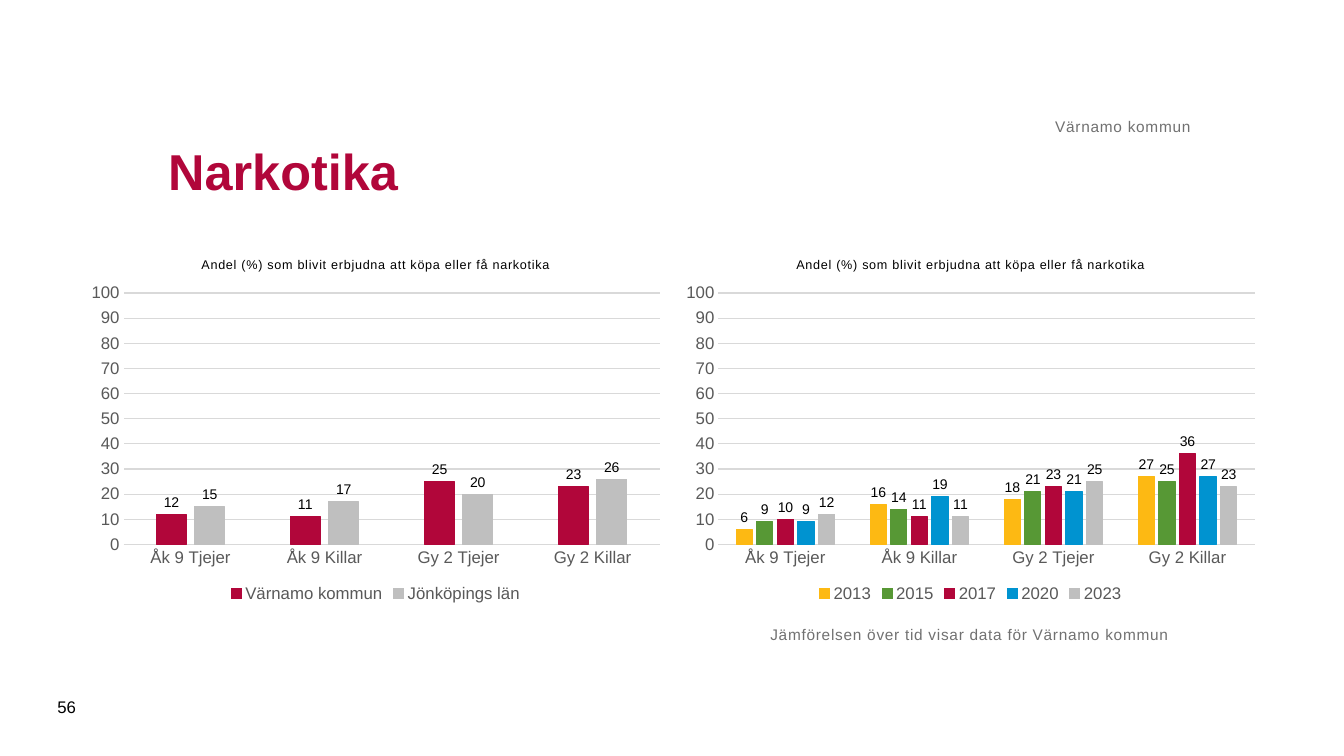
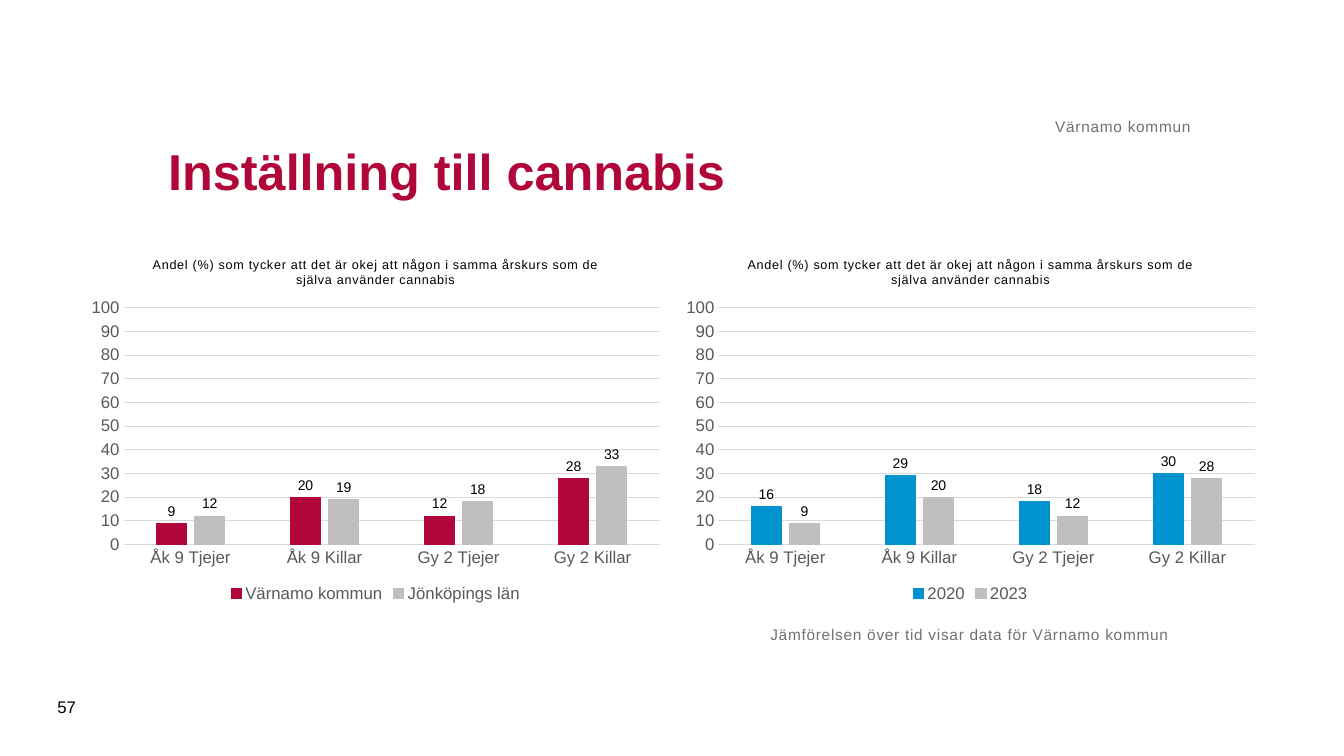
from pptx import Presentation
from pptx.chart.data import CategoryChartData
from pptx.dml.color import RGBColor
from pptx.enum.chart import XL_CHART_TYPE, XL_LABEL_POSITION, XL_LEGEND_POSITION, XL_TICK_MARK
from pptx.enum.text import MSO_ANCHOR, PP_ALIGN
from pptx.util import Inches, Pt

FONT = "Arial"
RED, GREY, BLUE = "B1063A", "BFBFBF", "0093D0"
BLACK, AXIS_TEXT, GRID, NOTE_TEXT = "000000", "595959", "D9D9D9", "717171"
SERIES_COLOURS = {
    "Värnamo kommun": RED, "Jönköpings län": GREY,
    "2013": "FDB913", "2015": "579835", "2017": RED, "2020": BLUE, "2023": GREY,
}
CATEGORIES = ["Åk 9 Tjejer", "Åk 9 Killar", "Gy 2 Tjejer", "Gy 2 Killar"]
NUMBER_FORMAT = "#,##0;#,##0"
LETTER_SPACING = 0.5
CHART_LEFTS = (0.79, 6.69)
CHART_TOP, CHART_WIDTH, CHART_HEIGHT = 2.4, 5.87, 3.62

TITLE = {"size": 36, "bold": True, "colour": RED}
NOTE = {"size": 11, "colour": NOTE_TEXT}
PAGE_NUMBER = {"size": 12, "colour": BLACK}
CHART_TEXT = {"size": 10, "colour": BLACK}
CHART_TITLE = {"size": 9, "bold": False, "colour": BLACK}
AXIS_LABEL = {"size": 12, "colour": AXIS_TEXT}

SLIDES = [
    {
        "title": "Narkotika",
        "number": 56,
        "measure": "Andel (%) som blivit erbjudna att köpa eller få narkotika",
        "charts": [
            {"Värnamo kommun": [12, 11, 25, 23], "Jönköpings län": [15, 17, 20, 26]},
            {
                "2013": [6, 16, 18, 27],
                "2015": [9, 14, 21, 25],
                "2017": [10, 11, 23, 36],
                "2020": [9, 19, 21, 27],
                "2023": [12, 11, 25, 23],
            },
        ],
    },
    {
        "title": "Inställning till cannabis",
        "number": 57,
        "measure": "Andel (%) som tycker att det är okej att någon i samma årskurs "
                   "som de själva använder cannabis",
        "charts": [
            {"Värnamo kommun": [9, 20, 12, 28], "Jönköpings län": [12, 19, 18, 33]},
            {"2020": [16, 29, 18, 30], "2023": [9, 20, 12, 28]},
        ],
    },
]


def colour(hex_value):
    """Turn a hex string into a colour."""
    return RGBColor.from_string(hex_value)


def set_font(font, style):
    """Apply a style dict to a font."""
    font.name = FONT
    for name, value in style.items():
        if name == "colour":
            font.color.rgb = colour(value)
        else:
            setattr(font, name, Pt(value) if name == "size" else value)


def set_line(line, hex_value):
    """Give a line its colour and the shared width."""
    line.color.rgb = colour(hex_value)
    line.width = Pt(0.75)


def add_span(para, text, style, spacing=0):
    """Add styled text to a paragraph, with optional letter spacing in points."""
    span = para.add_run()
    span.text = text
    set_font(span.font, style)
    if spacing:
        span._r.get_or_add_rPr().set("spc", str(int(spacing * 100)))


def add_text(page, bounds, text, style, anchor=MSO_ANCHOR.MIDDLE, align=PP_ALIGN.LEFT,
             inset=True, spacing=0):
    """Add a wrapped text box holding one line of text."""
    frame = page.shapes.add_textbox(*map(Inches, bounds)).text_frame
    frame.word_wrap = True
    frame.vertical_anchor = anchor
    if not inset:
        for side in ("left", "top", "right", "bottom"):
            setattr(frame, f"margin_{side}", 0)
    para = frame.paragraphs[0]
    para.alignment = align
    add_span(para, text, style, spacing)


def format_axes(chart):
    """Style both axes and the gridlines."""
    for axis in (chart.category_axis, chart.value_axis):
        axis.major_tick_mark = axis.minor_tick_mark = XL_TICK_MARK.NONE
        set_font(axis.tick_labels.font, AXIS_LABEL)
    set_line(chart.category_axis.format.line, GRID)
    scale = chart.value_axis
    scale.minimum_scale, scale.maximum_scale, scale.major_unit = 0, 100, 10
    scale.tick_labels.number_format = NUMBER_FORMAT
    scale.tick_labels.number_format_is_linked = False
    scale.format.line.fill.background()
    set_line(scale.major_gridlines.format.line, GRID)


def format_series(series):
    """Colour one series and label its columns."""
    shade = SERIES_COLOURS[series.name]
    series.format.fill.solid()
    series.format.fill.fore_color.rgb = colour(shade)
    set_line(series.format.line, shade)
    series.invert_if_negative = False
    labels = series.data_labels
    settings = {
        "show_value": True,
        "position": XL_LABEL_POSITION.OUTSIDE_END,
        "number_format": NUMBER_FORMAT,
        "number_format_is_linked": False,
    }
    for name, value in settings.items():
        setattr(labels, name, value)
    set_font(labels.font, CHART_TEXT)


def add_column_chart(page, left, measure, values_by_series):
    """Add a titled column chart with a legend below."""
    data = CategoryChartData()
    data.categories = CATEGORIES
    for name, values in values_by_series.items():
        data.add_series(name, values)
    bounds = map(Inches, (left, CHART_TOP, CHART_WIDTH, CHART_HEIGHT))
    chart = page.shapes.add_chart(XL_CHART_TYPE.COLUMN_CLUSTERED, *bounds, data).chart
    set_font(chart.font, CHART_TEXT)
    chart.has_title = True
    chart.chart_title.include_in_layout = False
    add_span(chart.chart_title.text_frame.paragraphs[0], measure, CHART_TITLE, LETTER_SPACING)
    chart.has_legend = True
    chart.legend.position = XL_LEGEND_POSITION.BOTTOM
    chart.legend.include_in_layout = False
    set_font(chart.legend.font, AXIS_LABEL)
    format_axes(chart)
    plot = chart.plots[0]
    plot.gap_width, plot.overlap, plot.vary_by_categories = 219, -27, False
    for series in plot.series:
        format_series(series)


def add_page(deck, content):
    """Add one slide with its two charts and the shared texts."""
    page = deck.slides.add_slide(deck.slide_layouts[6])
    for left, values_by_series in zip(CHART_LEFTS, content["charts"]):
        add_column_chart(page, left, content["measure"], values_by_series)
    add_text(page, (1.57, 0.98, 10.24, 1.42), content["title"], TITLE)
    add_text(page, (7.64, 6.2, 5.31, 0.94), "Jämförelsen över tid visar data för Värnamo kommun",
             NOTE, MSO_ANCHOR.TOP, inset=False, spacing=LETTER_SPACING)
    add_text(page, (1.57, 0.62, 10.24, 0.73), "Värnamo kommun",
             NOTE, MSO_ANCHOR.BOTTOM, PP_ALIGN.RIGHT, inset=False, spacing=LETTER_SPACING)
    add_text(page, (0.47, 6.81, 0.57, 0.4), str(content["number"]), PAGE_NUMBER)


def main():
    """Build and save the deck."""
    deck = Presentation()
    deck.slide_width, deck.slide_height = Inches(13.33), Inches(7.5)
    for content in SLIDES:
        add_page(deck, content)
    deck.save("out.pptx")


if __name__ == "__main__":
    main()
